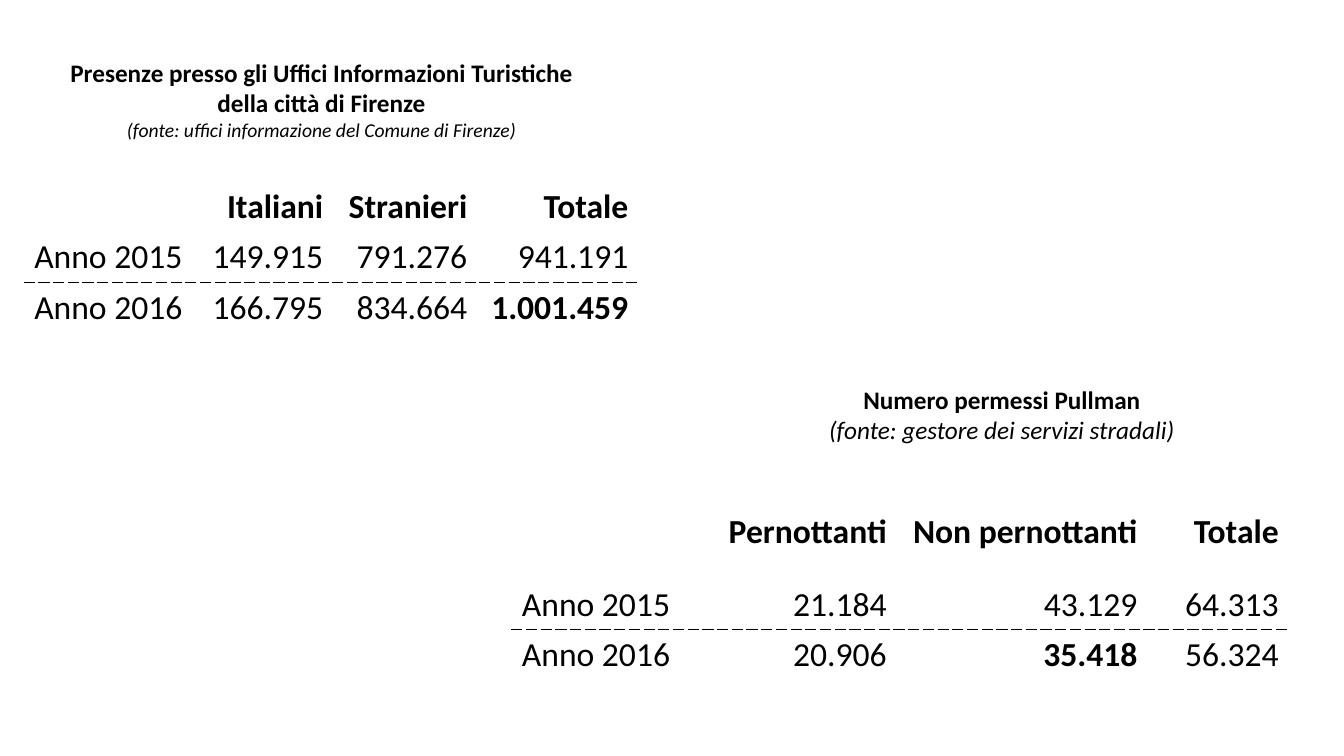
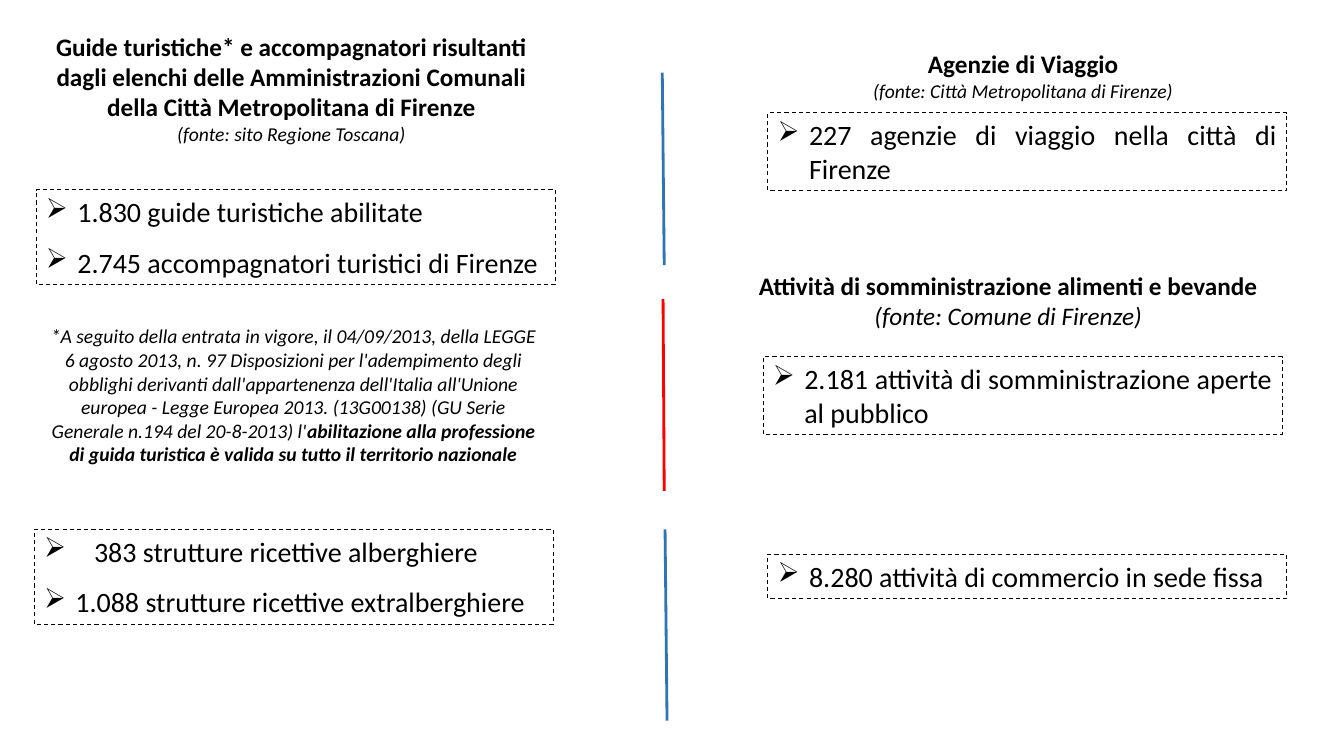
from lxml import etree
from pptx import Presentation, util as u
from pptx.dml.color import RGBColor
from pptx.enum import dml, shapes, text
from pptx.oxml.ns import qn

BLACK = RGBColor(0x00, 0x00, 0x00)
WHITE = RGBColor(0xFF, 0xFF, 0xFF)
BLUE = RGBColor(0x2E, 0x75, 0xB6)
RED = RGBColor(0xFF, 0x00, 0x00)
FONT = "Calibri"
ALIGN, ANCHOR = text.PP_ALIGN, text.MSO_ANCHOR

# Run formats
TITLE = dict(size=u.Pt(18), bold=True)
SOURCE = dict(size=u.Pt(14), italic=True)
SOURCE_LARGE = dict(size=u.Pt(18), italic=True)
NOTE_STRONG = dict(size=u.Pt(14), italic=True, bold=True)
ITEM = dict(size=u.Pt(20))
CELL = dict(size=u.Pt(24))
CELL_STRONG = dict(size=u.Pt(24), bold=True)

# Content: lengths in cm, frames as (left, top, width, height)
INDENT, WIDE_INDENT = 0.79, 1.26
BOX_W = 13.08
ROW_H = 1.27

SLIDES = [
    dict(
        texts=[
            ((1.45, 1.32, 13.31, 2.39), [
                [("Presenze presso gli Uffici Informazioni Turistiche della città di Firenze", TITLE)],
                [("(fonte: uffici informazione del Comune di Firenze)", SOURCE)]]),
            ((18.9, 9.55, 12.7, 1.8), [
                [("Numero permessi Pullman", TITLE)],
                [("(fonte: gestore dei servizi stradali)", SOURCE_LARGE)]]),
        ],
        tables=[
            dict(at=(0.61, 4.57), cols=(4.34, 3.45, 3.63, 4.06), header_h=ROW_H,
                 anchor=ANCHOR.TOP, strong="1.001.459", rows=[
                     ("", "Italiani", "Stranieri", "Totale"),
                     ("Anno 2015", "149.915", "791.276", "941.191"),
                     ("Anno 2016", "166.795", "834.664", "1.001.459")]),
            dict(at=(12.9, 12.19), cols=(4.52, 5.18, 6.32, 3.56), header_h=2.41,
                 anchor=ANCHOR.MIDDLE, strong="35.418", rows=[
                     ("", "Pernottanti", "Non pernottanti", "Totale"),
                     ("Anno 2015", "21.184", "43.129", "64.313"),
                     ("Anno 2016", "20.906", "35.418", "56.324")]),
        ],
    ),
    dict(
        texts=[
            ((0.69, 0.66, 13.31, 3.18), [
                [("Guide turistiche* e accompagnatori risultanti dagli elenchi delle "
                  "Amministrazioni Comunali della Città Metropolitana di Firenze", TITLE)],
                [("(fonte: sito Regione Toscana)", SOURCE)]]),
            ((0.91, 8.05, 12.98, 3.84), [
                [("*A seguito della entrata in vigore, il 04/09/2013, della LEGGE 6 agosto 2013, "
                  "n. 97 Disposizioni per l'adempimento degli obblighi derivanti "
                  "dall'appartenenza dell'Italia all'Unione europea - Legge Europea 2013. "
                  "(13G00138) (GU Serie Generale n.194 del 20-8-2013) l'", SOURCE),
                 ("abilitazione alla professione di guida turistica è valida su tutto "
                  "il territorio nazionale", NOTE_STRONG)]]),
            ((19.13, 1.09, 13.31, 1.63), [
                [("Agenzie di Viaggio", TITLE)],
                [("(fonte: Città Metropolitana di Firenze)", SOURCE)]]),
            ((16.94, 6.68, 16.94, 1.8), [
                [("Attività di somministrazione alimenti e bevande", TITLE)],
                [("(fonte: Comune di Firenze)", SOURCE_LARGE)]]),
        ],
        # Left, top, height, items with their text indent
        boxes=[
            (0.91, 4.78, 2.39, [("1.830 guide turistiche abilitate", INDENT),
                                ("2.745 accompagnatori turistici di Firenze", INDENT)]),
            (19.35, 2.84, 1.96, [("227 agenzie di viaggio nella città di Firenze", INDENT)]),
            (19.23, 8.99, 1.96, [("2.181 attività di somministrazione aperte al pubblico", INDENT)]),
            (19.35, 13.97, 1.12, [("8.280 attività di commercio in sede fissa", INDENT)]),
            (0.86, 13.34, 2.39, [("383 strutture ricettive alberghiere", WIDE_INDENT),
                                 ("1.088 strutture ricettive extralberghiere", INDENT)]),
        ],
        dividers=[
            ((16.69, 1.83, 16.74, 6.68), BLUE),
            ((16.76, 13.34, 16.81, 18.16), BLUE),
            ((16.71, 7.54, 16.74, 12.37), RED),
        ],
    ),
]


def cm(values):
    return [u.Cm(v) for v in values]


def add_run(p, words, fmt):
    r = p.add_run()
    r.text = words
    for name, value in dict(name=FONT, **fmt).items():
        setattr(r.font, name, value)
    r.font.color.rgb = BLACK


def add_text(s, frame, paragraphs, align=ALIGN.CENTER):
    sp = s.shapes.add_textbox(*cm(frame))
    tf = sp.text_frame
    tf.word_wrap = True
    tf.auto_size = text.MSO_AUTO_SIZE.SHAPE_TO_FIT_TEXT
    for i, runs in enumerate(paragraphs):
        p = tf.add_paragraph() if i else tf.paragraphs[0]
        p.alignment = align
        for words, fmt in runs:
            add_run(p, words, fmt)
    return sp


def add_box(s, left, top, height, items):
    """Dashed box with arrow bullets."""
    sp = add_text(s, (left, top, BOX_W, height),
                  [[(words, ITEM)] for words, _ in items], ALIGN.JUSTIFY)
    sp.line.color.rgb = BLACK
    sp.line.width = u.Pt(0.75)
    sp.line.dash_style = dml.MSO_LINE.DASH
    for p, (_, indent) in zip(sp.text_frame.paragraphs, items):
        p.space_before = p.space_after = u.Pt(6)
        pPr = p._p.get_or_add_pPr()
        pPr.set("marL", str(u.Cm(indent)))
        pPr.set("indent", str(-u.Cm(indent)))
        etree.SubElement(pPr, qn("a:buChar")).set("char", "➢")


def set_borders(cell, **edges):
    """Each edge is (colour, points, dash)."""
    tcPr = cell._tc.get_or_add_tcPr()
    for i, side in enumerate("LRTB"):
        color, points, dash = edges[side]
        ln = etree.Element(qn("a:ln" + side), w=str(u.Pt(points)))
        fill = etree.SubElement(ln, qn("a:solidFill"))
        etree.SubElement(fill, qn("a:srgbClr")).set("val", str(color))
        etree.SubElement(ln, qn("a:prstDash")).set("val", dash)
        tcPr.insert(i, ln)


def add_table(s, at, cols, header_h, anchor, strong, rows):
    heights = [header_h] + [ROW_H] * (len(rows) - 1)
    tbl = s.shapes.add_table(len(rows), len(cols),
                             *cm((*at, sum(cols), sum(heights)))).table
    tbl.first_row = tbl.horz_banding = False
    for col, width in zip(tbl.columns, cols):
        col.width = u.Cm(width)
    for row, height in zip(tbl.rows, heights):
        row.height = u.Cm(height)

    # Horizontal rules, from the top edge to the bottom edge
    thin = (WHITE, 1, "solid")
    rules = [thin, (WHITE, 3, "solid"), (BLACK, 1, "dash"), thin]
    for i, row in enumerate(rows):
        for j, words in enumerate(row):
            cell = tbl.cell(i, j)
            cell.fill.background()
            cell.vertical_anchor = anchor
            set_borders(cell, L=thin, R=thin, T=rules[i], B=rules[i + 1])
            if words:
                p = cell.text_frame.paragraphs[0]
                p.alignment = ALIGN.RIGHT if j else ALIGN.LEFT
                add_run(p, words, CELL_STRONG if i == 0 or words == strong else CELL)


def add_divider(s, ends, color):
    line = s.shapes.add_connector(shapes.MSO_CONNECTOR.STRAIGHT, *cm(ends))
    line.line.color.rgb = color
    line.line.width = u.Pt(2)
    etree.SubElement(line._element.spPr, qn("a:effectLst"))


def main():
    prs = Presentation()
    prs.slide_width, prs.slide_height = cm((33.87, 19.05))
    for content in SLIDES:
        s = prs.slides.add_slide(prs.slide_layouts[6])
        for frame, paragraphs in content["texts"]:
            add_text(s, frame, paragraphs)
        for table in content.get("tables", []):
            add_table(s, **table)
        for box in content.get("boxes", []):
            add_box(s, *box)
        for ends, color in content.get("dividers", []):
            add_divider(s, ends, color)
    prs.save("out.pptx")


if __name__ == "__main__":
    main()
